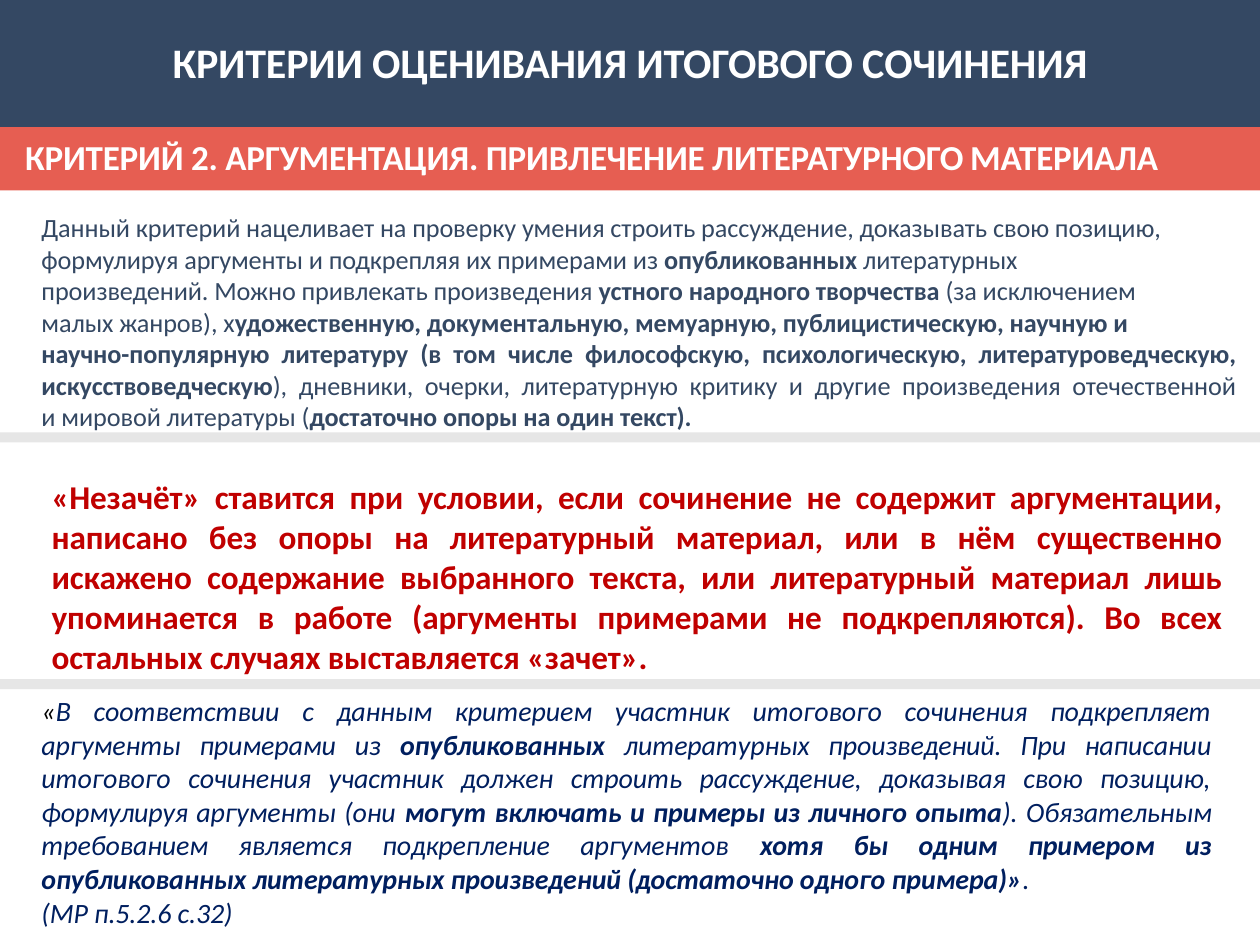
from lxml.etree import SubElement
from pptx import Presentation
from pptx.dml.color import RGBColor
from pptx.enum.shapes import MSO_SHAPE
from pptx.enum.text import MSO_ANCHOR, PP_ALIGN
from pptx.oxml.ns import qn
from pptx.util import Pt

HUES = {"navy": "344863", "coral": "E65E52", "gray": "E6E6E6", "white": "FFFFFF",
        "red": "C00000", "blue": "001F5F", "black": "000000"}


def style(run, size, hue, bold=False, slant=False):
    font = run.font
    font.name, font.size, font.bold, font.italic = "Calibri", Pt(size), bold, slant
    font.color.rgb = RGBColor.from_string(HUES[hue])


def inset(frame, top):
    """Set a top-anchored, wrapping frame with only a top margin."""
    frame.margin_left = frame.margin_right = frame.margin_bottom = 0
    frame.margin_top = Pt(top)
    frame.vertical_anchor = MSO_ANCHOR.TOP
    frame.word_wrap = True


deck = Presentation()
deck.slide_width, deck.slide_height = Pt(720), Pt(540)
slide = deck.slides.add_slide(deck.slide_layouts[5])
shapes = slide.shapes

# Full-width bands: top, height, colour
bands = []
for top, high, hue in [(0, 72.6, "navy"), (247, 5.8, "gray"),
                       (388, 5.8, "gray"), (72.6, 36.2, "coral")]:
    band = shapes.add_shape(MSO_SHAPE.RECTANGLE, 0, Pt(top), Pt(720), Pt(high))
    band.shadow.inherit = False
    band.fill.solid()
    band.fill.fore_color.rgb = RGBColor.from_string(HUES[hue])
    band.line.fill.background()
    bands.append(band)

# Title, in front of the navy band
title = shapes.title
title.left, title.top, title.width, title.height = 0, 0, Pt(720), Pt(72.6)
bands[0]._element.addnext(title._element)
frame = title.text_frame
frame.text = "КРИТЕРИИ ОЦЕНИВАНИЯ ИТОГОВОГО СОЧИНЕНИЯ"
inset(frame, 21)
para = frame.paragraphs[0]
para.alignment = PP_ALIGN.CENTER
style(para.runs[0], 24, "white", True)
para.runs[0].font._element.set("spc", "-10")

# Criterion heading, with a tab before its last word
frame = bands[-1].text_frame
frame.text = "КРИТЕРИЙ 2. АРГУМЕНТАЦИЯ. ПРИВЛЕЧЕНИЕ ЛИТЕРАТУРНОГО\tМАТЕРИАЛА"
inset(frame, 5)
para = frame.paragraphs[0]
para.alignment = PP_ALIGN.LEFT
props = para._p.get_or_add_pPr()
props.set("marL", str(Pt(14.4)))
props.set("indent", "0")
tabs = SubElement(props, qn("a:tabLst"))
SubElement(tabs, qn("a:tab"), pos=str(Pt(574.6)), algn="l")
style(para.runs[0], 20, "white", True)
para.runs[0].font._element.set("spc", "-15")

# Body: size, colour, italic, justified, left, right, space before, text.
# Asterisks switch bold on and off; a new line is a line break.
parts = [
    (15, "navy", False, False, 0.7, 0, 0,
     """Данный критерий нацеливает на проверку умения строить рассуждение, доказывать свою позицию,
формулируя аргументы и подкрепляя их примерами из *опубликованных* литературных
произведений. Можно привлекать произведения *устного народного творчества* (за исключением
малых жанров), х*удожественную, документальную, мемуарную, публицистическую, научную и*"""),
    (15, "navy", False, True, 0.7, 4, 0,
     """*научно-популярную литературу (в том числе философскую, психологическую, литературоведческую,
искусствоведческую*), дневники, очерки, литературную критику и другие произведения отечественной
и мировой литературы (*достаточно опоры на один текст).*"""),
    (19, "red", False, True, 6.5, 12, 25.5,
     """*«Незачёт» ставится при условии, если сочинение не содержит аргументации,
написано без опоры на литературный материал, или в нём существенно
искажено содержание выбранного текста, или литературный материал лишь
упоминается в работе (аргументы примерами не подкрепляются). Во всех
остальных случаях выставляется «зачет».*"""),
    (16, "blue", True, True, 0.7, 18, 9.9,
     """«В соответствии с данным критерием участник итогового сочинения подкрепляет
аргументы примерами из *опубликованных* литературных произведений. При написании
итогового сочинения участник должен строить рассуждение, доказывая свою позицию,
формулируя аргументы (они *могут включать и примеры из личного опыта*). Обязательным
требованием является подкрепление аргументов *хотя бы одним примером из
опубликованных литературных произведений (достаточно одного примера)»*."""),
    (16, "blue", True, True, 0.7, 0, 0.1, "(МР п.5.2.6 с.32)"),
]
box = shapes.add_textbox(Pt(23), Pt(119.5), Pt(687.6), Pt(411.8))
frame = box.text_frame
inset(frame, 1.4)
for rank, (size, hue, slant, even, left, right, gap, text) in enumerate(parts):
    para = frame.add_paragraph() if rank else frame.paragraphs[0]
    para.alignment = PP_ALIGN.JUSTIFY if even else PP_ALIGN.LEFT
    para.space_before = Pt(gap)
    props = para._p.get_or_add_pPr()
    props.set("marL", str(Pt(left)))
    props.set("marR", str(Pt(right)))
    props.set("indent", "0")
    if hue == "blue" and text.startswith("«"):
        run = para.add_run()
        run.text, text = text[0], text[1:]
        style(run, size, "black", False, slant)
    for turn, piece in enumerate(text.split("*")):
        for row, line in enumerate(piece.split("\n")):
            if row:
                para.add_line_break()
            if line:
                run = para.add_run()
                run.text = line
                style(run, size, hue, turn % 2 == 1, slant)
                run.font._element.set("spc", "-5")

deck.save("out.pptx")
